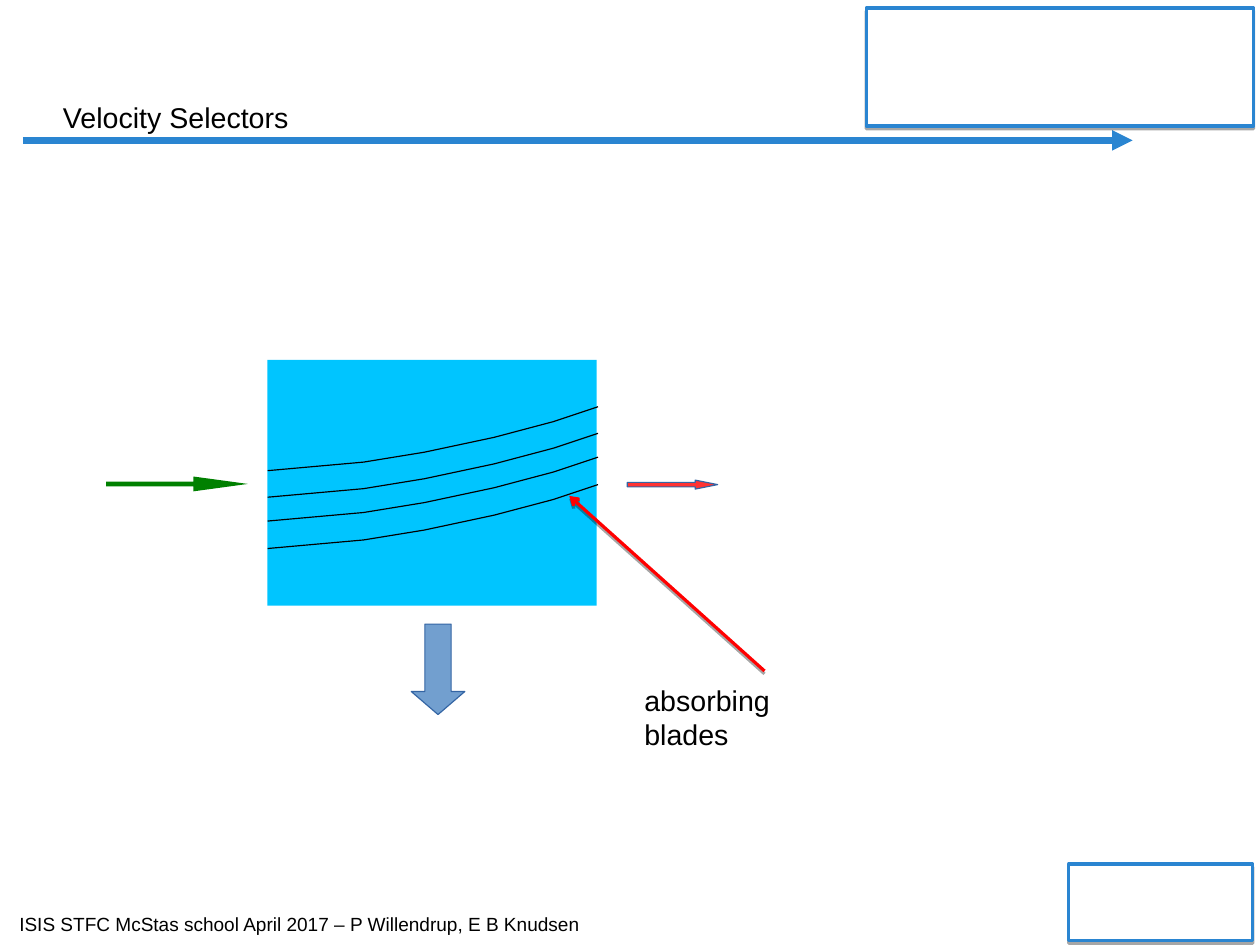
from dataclasses import dataclass

from lxml import etree
from pptx import Presentation
from pptx.dml.color import RGBColor
from pptx.enum.shapes import MSO_CONNECTOR, MSO_SHAPE
from pptx.enum.text import MSO_ANCHOR, PP_ALIGN
from pptx.oxml.ns import qn
from pptx.util import Cm, Pt

RECTANGLE = MSO_SHAPE.RECTANGLE
RIGHT_ARROW = MSO_SHAPE.RIGHT_ARROW
DOWN_ARROW = MSO_SHAPE.DOWN_ARROW
STRAIGHT = MSO_CONNECTOR.STRAIGHT
MIDDLE = MSO_ANCHOR.MIDDLE
LEFT = PP_ALIGN.LEFT

FONT = "Arial"
BLACK, WHITE = "000000", "FFFFFF"
FRAME_BLUE, ARROW_EDGE = "2A85D1", "3465A4"


@dataclass
class Block:
    kind: MSO_SHAPE
    left: float
    top: float
    width: float
    height: float
    fill: str
    line: str | None = None
    line_width: float = 0.75
    adjustments: tuple[float, ...] = ()
    shadow: bool = False


@dataclass
class Arrow:
    start: tuple[float, float]
    end: tuple[float, float]
    color: str
    width: float
    head: str
    shadow: bool = False


@dataclass
class Label:
    text: str
    left: float
    top: float
    width: float
    height: float
    size: float
    side_inset: float


RULE = Arrow((0.51, 3.12), (25.17, 3.12), FRAME_BLUE, 4.31, "triangle")
POINTER = Arrow((16.99, 14.91), (12.65, 11.02), "FF0000", 2, "arrow", shadow=True)

FRAMES = [
    Block(RECTANGLE, 23.75, 19.2, 4.09, 1.7, WHITE, FRAME_BLUE, 2, shadow=True),
    Block(RECTANGLE, 19.25, 0.18, 8.61, 2.62, WHITE, FRAME_BLUE, 2, shadow=True),
]
SELECTOR_PARTS = [
    Block(RECTANGLE, 5.94, 8, 7.32, 5.46, "00C5FF"),
    Block(RIGHT_ARROW, 2.36, 10.59, 3.15, 0.33, "008000", adjustments=(0.32, 3.67)),
    Block(DOWN_ARROW, 9.14, 13.87, 1.19, 2.01, "729FCF", ARROW_EDGE, adjustments=(0.49, 0.43)),
    Block(RIGHT_ARROW, 13.94, 10.67, 2.01, 0.2, "FF3333", ARROW_EDGE, adjustments=(0.5, 2.5)),
]

FOOTER = Label("ISIS STFC McStas school April 2017 – P Willendrup, E B Knudsen",
               0.3, 20.14, 12.9, 0.76, 12, 0.13)
BLADES_LABEL = Label("absorbing blades", 14.07, 15.04, 5.31, 1.02, 18, 0.25)

BLADE_LEFT = 5.95
BLADE_TOPS = [10.46, 11.05, 11.58, 12.19]
BLADE_CURVE = [(2.13, -0.19), (3.48, -0.41), (5.03, -0.74), (6.35, -1.09), (7.34, -1.42)]


def rgb(color: str) -> RGBColor:
    return RGBColor.from_string(color)


def set_shadow(shape, visible: bool) -> None:
    """Replace the theme shadow by a small drop shadow or by none."""
    effects = etree.SubElement(shape._element.spPr, qn("a:effectLst"))
    if visible:
        outer = etree.SubElement(effects, qn("a:outerShdw"), blurRad="0",
                                 dist=str(Pt(1.8)), dir="5400000", rotWithShape="0")
        color = etree.SubElement(outer, qn("a:srgbClr"), val=BLACK)
        etree.SubElement(color, qn("a:alpha"), val="35000")


def set_line(shape, color: str | None, width: float) -> None:
    if color is None:
        shape.line.fill.background()
    else:
        shape.line.color.rgb = rgb(color)
        shape.line.width = Pt(width)


def add_block(slide, block: Block) -> None:
    shape = slide.shapes.add_shape(block.kind, Cm(block.left), Cm(block.top),
                                   Cm(block.width), Cm(block.height))
    for index, value in enumerate(block.adjustments):
        shape.adjustments[index] = value
    shape.fill.solid()
    shape.fill.fore_color.rgb = rgb(block.fill)
    set_line(shape, block.line, block.line_width)
    set_shadow(shape, block.shadow)


def add_arrow(slide, arrow: Arrow) -> None:
    connector = slide.shapes.add_connector(
        STRAIGHT, *(Cm(value) for value in arrow.start + arrow.end))
    set_line(connector, arrow.color, arrow.width)
    etree.SubElement(connector.line._get_or_add_ln(), qn("a:tailEnd"), type=arrow.head)
    set_shadow(connector, arrow.shadow)


def add_blade(slide, top: float) -> None:
    builder = slide.shapes.build_freeform(Cm(BLADE_LEFT), Cm(top))
    points = [(Cm(BLADE_LEFT + x), Cm(top + y)) for x, y in BLADE_CURVE]
    builder.add_line_segments(points, close=False)
    blade = builder.convert_to_shape()
    blade.fill.background()
    set_line(blade, BLACK, 0.75)
    set_shadow(blade, False)


def write_text(text_frame, text: str, size: float) -> None:
    text_frame.text = text
    paragraph = text_frame.paragraphs[0]
    paragraph.alignment = LEFT
    font = paragraph.runs[0].font
    font.name = FONT
    font.size = Pt(size)
    font.color.rgb = rgb(BLACK)


def add_label(slide, label: Label) -> None:
    box = slide.shapes.add_textbox(Cm(label.left), Cm(label.top),
                                   Cm(label.width), Cm(label.height))
    text_frame = box.text_frame
    text_frame.word_wrap = False
    text_frame.margin_left = text_frame.margin_right = Cm(label.side_inset)
    text_frame.margin_top = text_frame.margin_bottom = Cm(0.13)
    write_text(text_frame, label.text, label.size)


def format_title(slide) -> None:
    title = slide.shapes.title
    title.left, title.top = Cm(1.4), Cm(0.84)
    title.width, title.height = Cm(25.2), Cm(3.51)
    text_frame = title.text_frame
    text_frame.margin_left = text_frame.margin_right = 0
    text_frame.margin_top = text_frame.margin_bottom = 0
    text_frame.vertical_anchor = MIDDLE
    write_text(text_frame, "Velocity Selectors", 18)


def main() -> None:
    presentation = Presentation()
    presentation.slide_width, presentation.slide_height = Cm(28), Cm(21)
    slide = presentation.slides.add_slide(presentation.slide_layouts[5])

    # Header, footer and corner frames
    format_title(slide)
    add_arrow(slide, RULE)
    add_label(slide, FOOTER)
    for frame in FRAMES:
        add_block(slide, frame)

    # Selector with beam and motion arrows
    for part in SELECTOR_PARTS:
        add_block(slide, part)

    # Absorbing blades and their label
    add_label(slide, BLADES_LABEL)
    add_arrow(slide, POINTER)
    for top in BLADE_TOPS:
        add_blade(slide, top)

    presentation.save("out.pptx")


if __name__ == "__main__":
    main()
